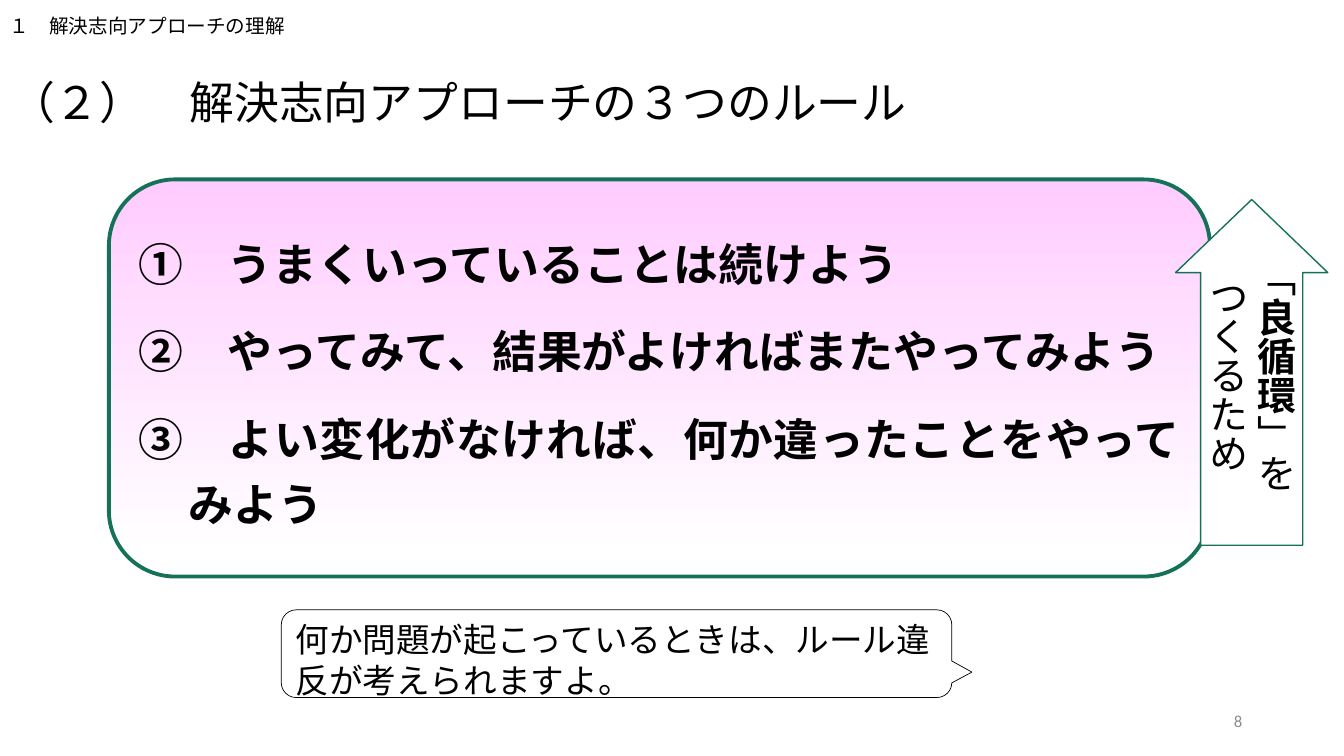
from dataclasses import dataclass

from lxml.etree import SubElement
from pptx import Presentation
from pptx.dml.color import RGBColor
from pptx.enum.shapes import MSO_SHAPE
from pptx.enum.text import MSO_ANCHOR, PP_ALIGN
from pptx.oxml.ns import qn
from pptx.shapes.autoshape import Shape
from pptx.slide import Slide
from pptx.text.text import TextFrame, _Paragraph
from pptx.util import Inches, Pt

WIDTH, HEIGHT = 13.33, 7.5
COLORS = {"text": "000000", "number": "8C8C8C", "green": "157259",
          "pink": "FFCCFF", "white": "FFFFFF"}
JAPANESE, LATIN = "Noto Sans CJK JP", "Calibri"
RULES = ("①　うまくいっていることは続けよう",
         "②　やってみて、結果がよければまたやってみよう",
         "③　よい変化がなければ、何か違ったことをやってみよう")


@dataclass(frozen=True)
class Box:
    """Place and size as shares of the slide's width and height."""
    left: float
    top: float
    width: float
    height: float

    def inches(self) -> tuple[int, int, int, int]:
        return (Inches(self.left * WIDTH), Inches(self.top * HEIGHT),
                Inches(self.width * WIDTH), Inches(self.height * HEIGHT))


@dataclass(frozen=True)
class TextStyle:
    size: float
    font: str = JAPANESE
    color: str = "text"
    bold: bool = False
    align: PP_ALIGN = PP_ALIGN.LEFT
    anchor: MSO_ANCHOR = MSO_ANCHOR.TOP


@dataclass(frozen=True)
class Outline:
    preset: MSO_SHAPE
    box: Box
    line_color: str
    line_width: float
    adjustments: tuple[float, ...] = ()


@dataclass(frozen=True)
class Label:
    text: str
    box: Box
    style: TextStyle


RULE_PANEL = Outline(MSO_SHAPE.ROUNDED_RECTANGLE,
                     Box(0.081, 0.2373, 0.8192, 0.5253), "green", 2.75)
CALLOUT = Outline(MSO_SHAPE.ROUNDED_RECTANGULAR_CALLOUT,
                  Box(0.2093, 0.8067, 0.4989, 0.116), "text", 0.5, (0.53, 0.21, 0.17))
CYCLE_ARROW = Outline(MSO_SHAPE.UP_ARROW,
                      Box(0.8747, 0.264, 0.1133, 0.4573), "green", 1, (0.67, 0.48))
LABELS = (
    Label("8", Box(0.7067, 0.9267, 0.2251, 0.0533),
          TextStyle(12, LATIN, "number", align=PP_ALIGN.RIGHT, anchor=MSO_ANCHOR.MIDDLE)),
    Label("１　解決志向アプローチの理解", Box(0, 0.012, 0.2693, 0.0453), TextStyle(14, LATIN)),
)


def color(name: str) -> RGBColor:
    return RGBColor.from_string(COLORS[name])


def format_paragraph(paragraph: _Paragraph, style: TextStyle) -> None:
    paragraph.alignment = style.align
    font = paragraph.font
    font.name, font.size, font.bold = style.font, Pt(style.size), style.bold
    font.color.rgb = color(style.color)
    SubElement(font._element, qn("a:ea"), typeface=style.font)


def write(frame: TextFrame, text: str, style: TextStyle) -> None:
    frame.text = text
    frame.word_wrap = True
    frame.vertical_anchor = style.anchor
    for paragraph in frame.paragraphs:
        format_paragraph(paragraph, style)


def add_outline(slide: Slide, outline: Outline) -> Shape:
    shape = slide.shapes.add_shape(outline.preset, *outline.box.inches())
    shape.shadow.inherit = False
    shape.fill.solid()
    shape.fill.fore_color.rgb = color("white")
    shape.line.color.rgb = color(outline.line_color)
    shape.line.width = Pt(outline.line_width)
    for index, value in enumerate(outline.adjustments):
        shape.adjustments[index] = value
    return shape


def add_title(slide: Slide) -> None:
    title = slide.shapes.title
    title.left, title.top, title.width, title.height = Box(0, 0.0987, 0.7142, 0.08).inches()
    write(title.text_frame, "（２）　解決志向アプローチの３つのルール",
          TextStyle(32, anchor=MSO_ANCHOR.MIDDLE))
    title.text_frame.paragraphs[0].line_spacing = 0.9


def add_rules(slide: Slide) -> None:
    panel = add_outline(slide, RULE_PANEL)
    panel.fill.gradient()
    panel.fill.gradient_angle = 270
    for stop, (position, name) in zip(panel.fill.gradient_stops,
                                      ((0, "pink"), (0.94, "white"))):
        stop.position = position
        stop.color.rgb = color(name)
    write(panel.text_frame, "\n".join(RULES),
          TextStyle(32, bold=True, align=PP_ALIGN.JUSTIFY, anchor=MSO_ANCHOR.MIDDLE))
    for index, paragraph in enumerate(panel.text_frame.paragraphs):
        paragraph.line_spacing = 1.2
        if index:
            paragraph.space_before = Pt(16.5)
            properties = paragraph._p.get_or_add_pPr()
            properties.set("marL", str(Inches(0.5)))
            properties.set("indent", str(Inches(-0.5)))


def add_cycle_arrow(slide: Slide) -> None:
    frame = add_outline(slide, CYCLE_ARROW).text_frame
    write(frame, "「\nつくるため",
          TextStyle(28, align=PP_ALIGN.CENTER, anchor=MSO_ANCHOR.MIDDLE))
    for text, bold in (("良循環", True), ("」を", False)):
        run = frame.paragraphs[0].add_run()
        run.text, run.font.bold = text, bold
    frame._txBody.bodyPr.set("vert", "eaVert")


def main() -> None:
    presentation = Presentation()
    presentation.slide_width, presentation.slide_height = Inches(WIDTH), Inches(HEIGHT)
    slide = presentation.slides.add_slide(presentation.slide_layouts.get_by_name("Title Only"))
    add_title(slide)
    add_rules(slide)
    write(add_outline(slide, CALLOUT).text_frame,
          "何か問題が起こっているときは、ルール違反が考えられますよ。", TextStyle(24, LATIN))
    add_cycle_arrow(slide)
    for label in LABELS:
        text_box = slide.shapes.add_textbox(*label.box.inches())
        write(text_box.text_frame, label.text, label.style)
    presentation.save("out.pptx")


if __name__ == "__main__":
    main()
